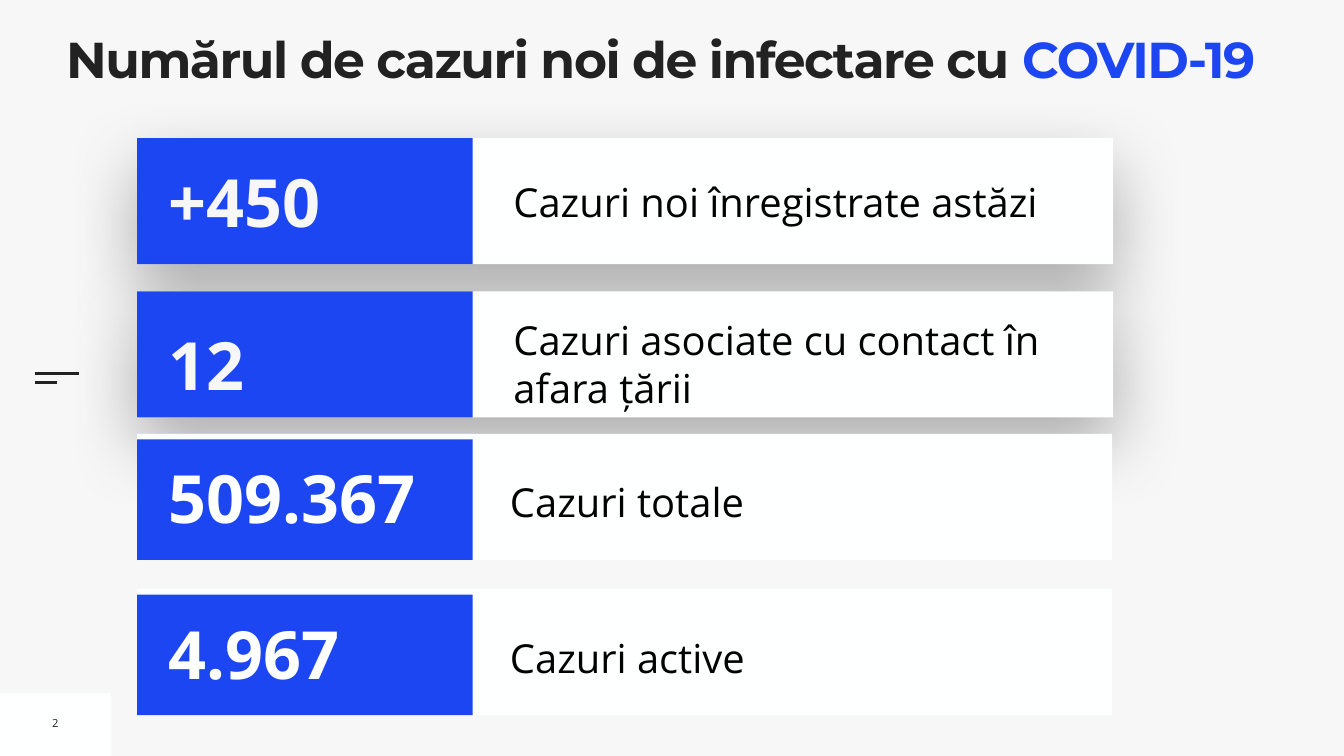
"""Builds the slide with the daily COVID-19 case figures."""
from lxml import etree
from pptx import Presentation
from pptx import util as u
from pptx.dml.color import RGBColor
from pptx.enum import shapes, text
from pptx.oxml import ns

PX = 9144  # EMU
BLUE = RGBColor(0x1D, 0x46, 0xF3)
WHITE = RGBColor(0xFE, 0xFF, 0xFF)
PALE = RGBColor(0xF7, 0xF7, 0xF7)
INK = RGBColor(0x22, 0x22, 0x22)
BLACK = RGBColor(0, 0, 0)


def write(frame, runs, font="Open Sans", size=57, bold=False, spacing=0, line=None,
          before=None, align=text.PP_ALIGN.LEFT, anchor=text.MSO_ANCHOR.MIDDLE,
          inset=10, wrap=True, fit=text.MSO_AUTO_SIZE.SHAPE_TO_FIT_TEXT):
    """Fill a text frame with one paragraph of (words, colour) runs."""
    frame.word_wrap, frame.auto_size, frame.vertical_anchor = wrap, fit, anchor
    frame.margin_left = frame.margin_right = inset * PX
    frame.margin_top = frame.margin_bottom = inset * PX
    paragraph = frame.paragraphs[0]
    paragraph.alignment = align
    if line is not None:
        paragraph.line_spacing = line
    if before is not None:
        paragraph.space_before = u.Pt(before)
    for words, colour in runs:
        run = paragraph.add_run()
        run.text = words
        run.font.name, run.font.size, run.font.bold = font, u.Pt(size), bold
        run.font.color.rgb = colour
        if spacing:
            run.font._element.set("spc", str(spacing * 100))


class Deck:
    """Holds the presentation, its current slide and the shared style."""

    def __init__(self, width, height):
        self.presentation = Presentation()
        self.presentation.slide_width = width * PX
        self.presentation.slide_height = height * PX
        self.slide = self.presentation.slides.add_slide(self.presentation.slide_layouts[5])
        fill = self.slide.background.fill
        fill.solid()
        fill.fore_color.rgb = PALE

    def title(self, box, runs):
        heading = self.slide.shapes.title
        heading.left, heading.top, heading.width, heading.height = (v * PX for v in box)
        write(heading.text_frame, runs, font="Montserrat", size=72, bold=True, spacing=-2,
              line=0.8, inset=0, anchor=text.MSO_ANCHOR.TOP, fit=text.MSO_AUTO_SIZE.NONE)

    def panel(self, box, colour, parent=None, shadow=False):
        target = (parent or self.slide).shapes
        panel = target.add_shape(shapes.MSO_SHAPE.RECTANGLE, *(v * PX for v in box))
        panel.fill.solid()
        panel.fill.fore_color.rgb = colour
        panel.line.fill.background()
        panel.shadow.inherit = False
        if shadow:
            effects = panel._element.spPr.find(ns.qn("a:effectLst"))
            outer = etree.SubElement(effects, ns.qn("a:outerShdw"), blurRad=str(u.Pt(100)),
                                     dist=str(u.Pt(40)), dir="5400000", rotWithShape="0")
            black = etree.SubElement(outer, ns.qn("a:srgbClr"), val=str(BLACK))
            etree.SubElement(black, ns.qn("a:alpha"), val="30000")

    def label(self, box, words, colour, parent=None, **style):
        target = (parent or self.slide).shapes
        label = target.add_textbox(*(v * PX for v in box))
        write(label.text_frame, [(words, colour)], **style)

    def rule(self, left, top, right):
        rule = self.slide.shapes.add_connector(
            shapes.MSO_CONNECTOR.STRAIGHT, left * PX, top * PX, right * PX, top * PX)
        rule.line.color.rgb, rule.line.width = INK, u.Pt(3)
        etree.SubElement(rule._element.spPr, ns.qn("a:effectLst"))

    def statistic(self, top, figure, meaning, figure_top, meaning_top, meaning_height, raised):
        row = self.slide.shapes.add_group_shape()
        drop = 0 if raised else 11
        self.panel((272, top, 1937 if raised else 1935, 250), WHITE, row, shadow=raised)
        if raised:
            self.label((1009, meaning_top, 1176, meaning_height), meaning, BLACK, row)
        else:
            self.label((1012, meaning_top, 1158, meaning_height), meaning, BLACK, row,
                       inset=0, line=1.3, before=20)
        self.panel((272, top + drop, 666, 250 - drop), BLUE, row)
        self.label((325, figure_top, 603, 180), figure, PALE if raised else WHITE, row,
                   size=95, bold=True)


def main():
    deck = Deck(2667, 1500)
    deck.panel((0, 1376, 220, 124), WHITE)
    deck.rule(69, 741, 157)
    deck.rule(69, 759, 113)
    deck.label((93, 1409, 34, 51), "2", INK, size=16, wrap=False, align=text.PP_ALIGN.CENTER)
    deck.title((131, 78, 2394, 158),
               [("Numărul de cazuri noi de infectare cu ", INK), ("COVID-19", BLUE)])
    for row in (
        (1169, "4.967", "Cazuri active", 1205, 1227, 125, False),
        (274, "+450", "Cazuri noi înregistrate astăzi", 309, 341, 116, True),
        (578, "12", "Cazuri asociate cu contact în afara țării", 632, 616, 212, True),
        (861, "509.367", "Cazuri totale", 896, 925, 112, False),
    ):
        deck.statistic(*row)
    deck.presentation.save("out.pptx")


if __name__ == "__main__":
    main()
